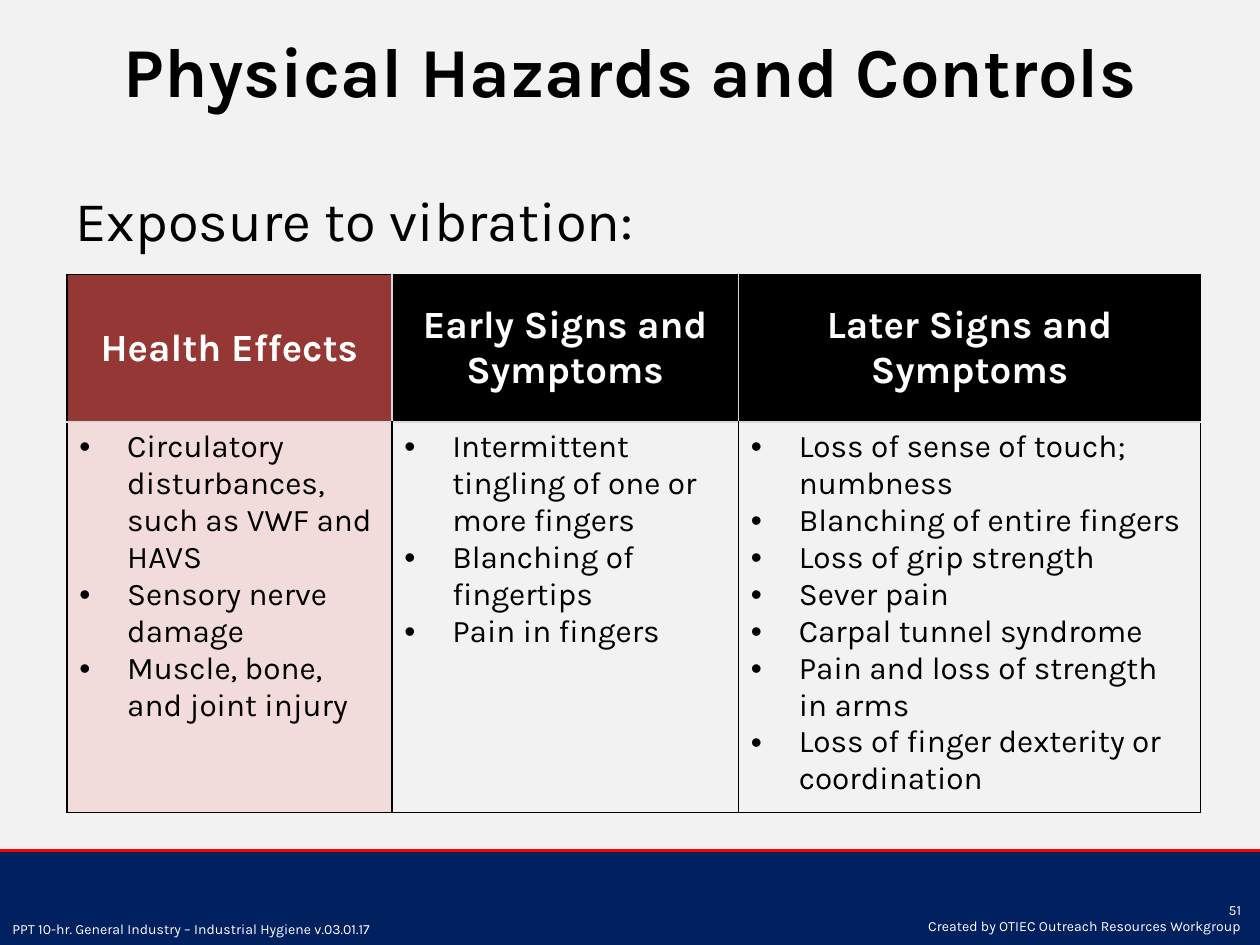
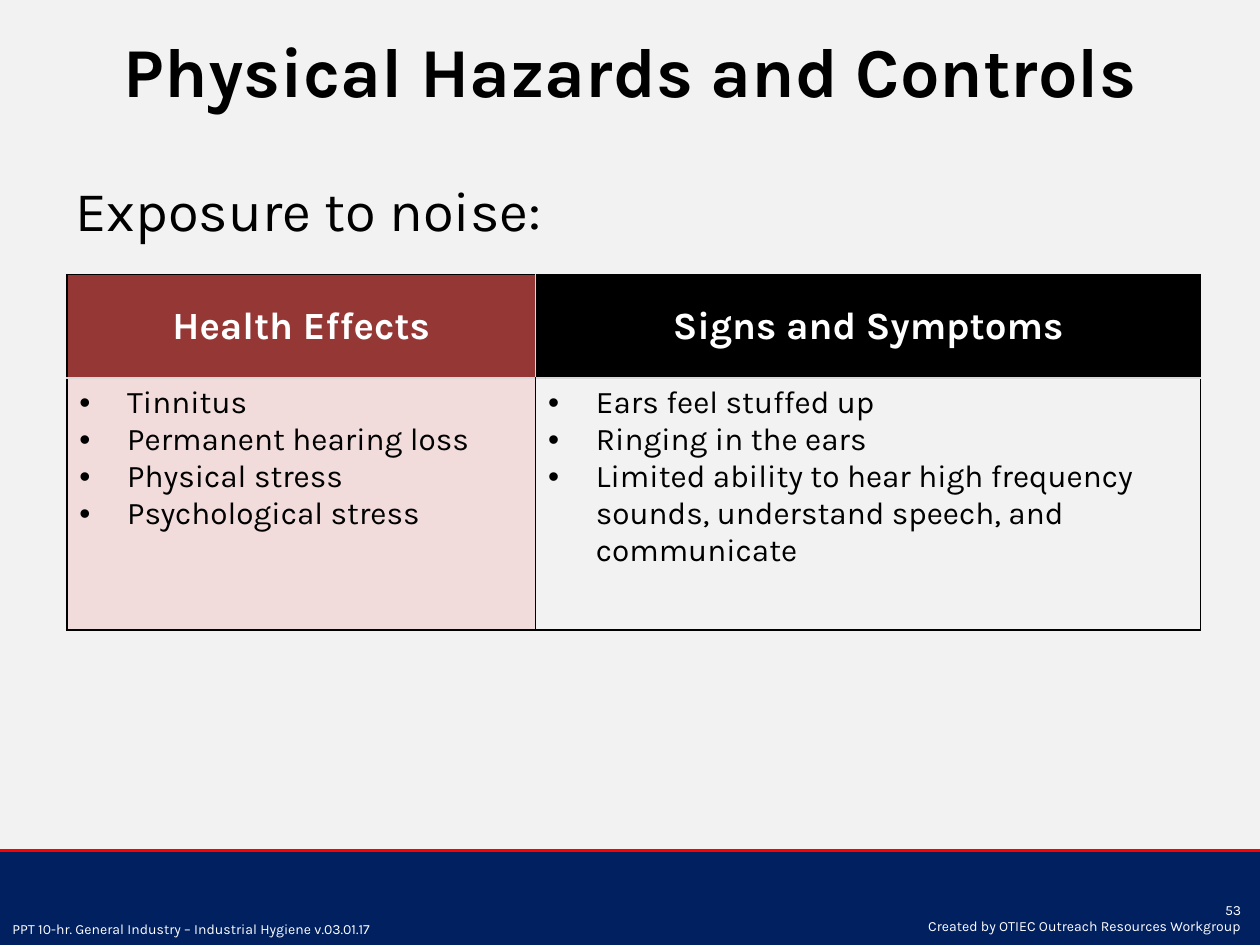
from dataclasses import dataclass
from lxml import etree
from pptx import Presentation
from pptx.dml.color import RGBColor
from pptx.enum import shapes, text
from pptx.oxml import ns
from pptx.util import Inches, Pt


@dataclass(frozen=True)
class Theme:
    font: str = "Karla"
    page: str = "F2F2F2"
    ink: str = "000000"
    white: str = "FFFFFF"
    navy: str = "002060"
    red: str = "FF0000"
    brick: str = "953735"
    blush: str = "F2DCDB"
    rule: str = "D9D9D9"
    title: int = 40
    lead: int = 32
    head: int = 22
    body: int = 18
    foot: int = 8


T = Theme()
LEFT, CENTER, RIGHT = text.PP_ALIGN.LEFT, text.PP_ALIGN.CENTER, text.PP_ALIGN.RIGHT
TOP, MIDDLE = text.MSO_ANCHOR.TOP, text.MSO_ANCHOR.MIDDLE
INDENT = Inches(0.38)

SLIDES = [
    dict(number=51, lead="Exposure to vibration:", box=(0.5, 1.42, 8, 1.42),
         rows=(1.17, 3.1), cols=[
             (2.58, "Health Effects", [
                 "Circulatory disturbances, such as VWF and HAVS",
                 "Sensory nerve damage",
                 "Muscle, bone, and joint injury"]),
             (2.75, "Early Signs and Symptoms", [
                 "Intermittent tingling of one or more fingers",
                 "Blanching of fingertips",
                 "Pain in fingers"]),
             (3.67, "Later Signs and Symptoms", [
                 "Loss of sense of touch; numbness",
                 "Blanching of entire fingers",
                 "Loss of grip strength",
                 "Sever pain",
                 "Carpal tunnel syndrome",
                 "Pain and loss of strength in arms",
                 "Loss of finger dexterity or coordination"])]),
    dict(number=53, lead="Exposure to noise:", box=(0.5, 1.34, 8, 0.92),
         rows=(0.82, 2), cols=[
             (3.72, "Health Effects", [
                 "Tinnitus",
                 "Permanent hearing loss",
                 "Physical stress",
                 "Psychological stress"]),
             (5.28, "Signs and Symptoms", [
                 "Ears feel stuffed up",
                 "Ringing in the ears",
                 "Limited ability to hear high frequency sounds, "
                 "understand speech, and communicate"])]),
]


def rgb(code):
    return RGBColor.from_string(code)


def paint(fill, code):
    fill.solid()
    fill.fore_color.rgb = rgb(code)


def write(frame, lines, size, color=T.ink, bold=False, align=LEFT):
    """Fill a text frame, one paragraph a line, and return the paragraphs."""
    for i, line in enumerate(lines):
        para = frame.paragraphs[0] if i == 0 else frame.add_paragraph()
        para.alignment = align
        run = para.add_run()
        run.text = line
        font = run.font
        font.name, font.size, font.bold = T.font, Pt(size), bold
        font.color.rgb = rgb(color)
    return frame.paragraphs


def label(slide, box, lines, size, anchor=TOP, **style):
    frame = slide.shapes.add_textbox(*map(Inches, box)).text_frame
    frame.word_wrap = True
    frame.vertical_anchor = anchor
    write(frame, lines, size, **style)


def bullet(para):
    props = para._p.get_or_add_pPr()
    props.set("marL", str(INDENT))
    props.set("indent", str(-INDENT))
    etree.SubElement(props, ns.qn("a:buFont")).set("typeface", "Arial")
    etree.SubElement(props, ns.qn("a:buChar")).set("char", "•")


def edge(cell, **sides):
    """Draw one-point cell borders, given as L, R, T, B colours in that order."""
    props = cell._tc.get_or_add_tcPr()
    for side, code in sides.items():
        line = etree.SubElement(props, ns.qn("a:ln" + side), w=str(Pt(1)))
        fill = etree.SubElement(line, ns.qn("a:solidFill"))
        etree.SubElement(fill, ns.qn("a:srgbClr"), val=code)


def footer(slide, box, number):
    x, y, w, h = box
    band = slide.shapes.add_shape(shapes.MSO_SHAPE.RECTANGLE, *map(Inches, box))
    band.shadow.inherit = False
    paint(band.fill, T.navy)
    band.line.fill.background()
    line = slide.shapes.add_connector(
        shapes.MSO_CONNECTOR.STRAIGHT, *map(Inches, (x, y, x + w, y)))
    line.line.width = Pt(2)
    line.line.color.rgb = rgb(T.red)
    etree.SubElement(line._element.spPr, ns.qn("a:effectLst"))
    label(slide, (x, y + 0.51, 3.17, 0.24),
          ["PPT 10-hr. General Industry – Industrial Hygiene v.03.01.17"],
          T.foot, color=T.white)
    label(slide, (x + w - 3.13, y + 0.3, 3.08, 0.47),
          [str(number), "Created by OTIEC Outreach Resources Workgroup"],
          T.foot, MIDDLE, color=T.white, align=RIGHT)


def grid(slide, x, y, rows, cols):
    """Place a table of headed bullet lists; the first column is tinted."""
    width = sum(col[0] for col in cols)
    frame = slide.shapes.add_table(
        len(rows), len(cols), *map(Inches, (x, y, width, sum(rows))))
    table = frame.table
    table.horz_banding = False
    for row, high in zip(table.rows, rows):
        row.height = Inches(high)
    last = len(cols) - 1
    for i, (wide, name, items) in enumerate(cols):
        table.columns[i].width = Inches(wide)
        head, body = table.cell(0, i), table.cell(1, i)
        edge(head, L=T.rule if i else T.ink, R=T.ink if i == last else T.rule,
             T=T.ink, B=T.rule)
        edge(body, L=T.ink, R=T.ink, T=T.rule, B=T.ink)
        paint(head.fill, T.ink if i else T.brick)
        paint(body.fill, T.page if i else T.blush)
        head.vertical_anchor = MIDDLE
        write(head.text_frame, [name], T.head, T.white, True, CENTER)
        for para in write(body.text_frame, items, T.body):
            bullet(para)


def hazard(deck, number, lead, box, rows, cols):
    slide = deck.slides.add_slide(deck.slide_layouts[6])
    paint(slide.background.fill, T.page)
    footer(slide, (0, 6.75, 10, 0.75), number)
    grid(slide, 0.53, 2.18, rows, cols)
    label(slide, (0.5, 0.17, 9, 1.25), ["Physical Hazards and Controls"],
          T.title, bold=True, align=CENTER)
    label(slide, box, [lead], T.lead)


def main():
    deck = Presentation()
    deck.slide_width, deck.slide_height = Inches(10), Inches(7.5)
    for page in SLIDES:
        hazard(deck, **page)
    deck.save("out.pptx")


if __name__ == "__main__":
    main()
